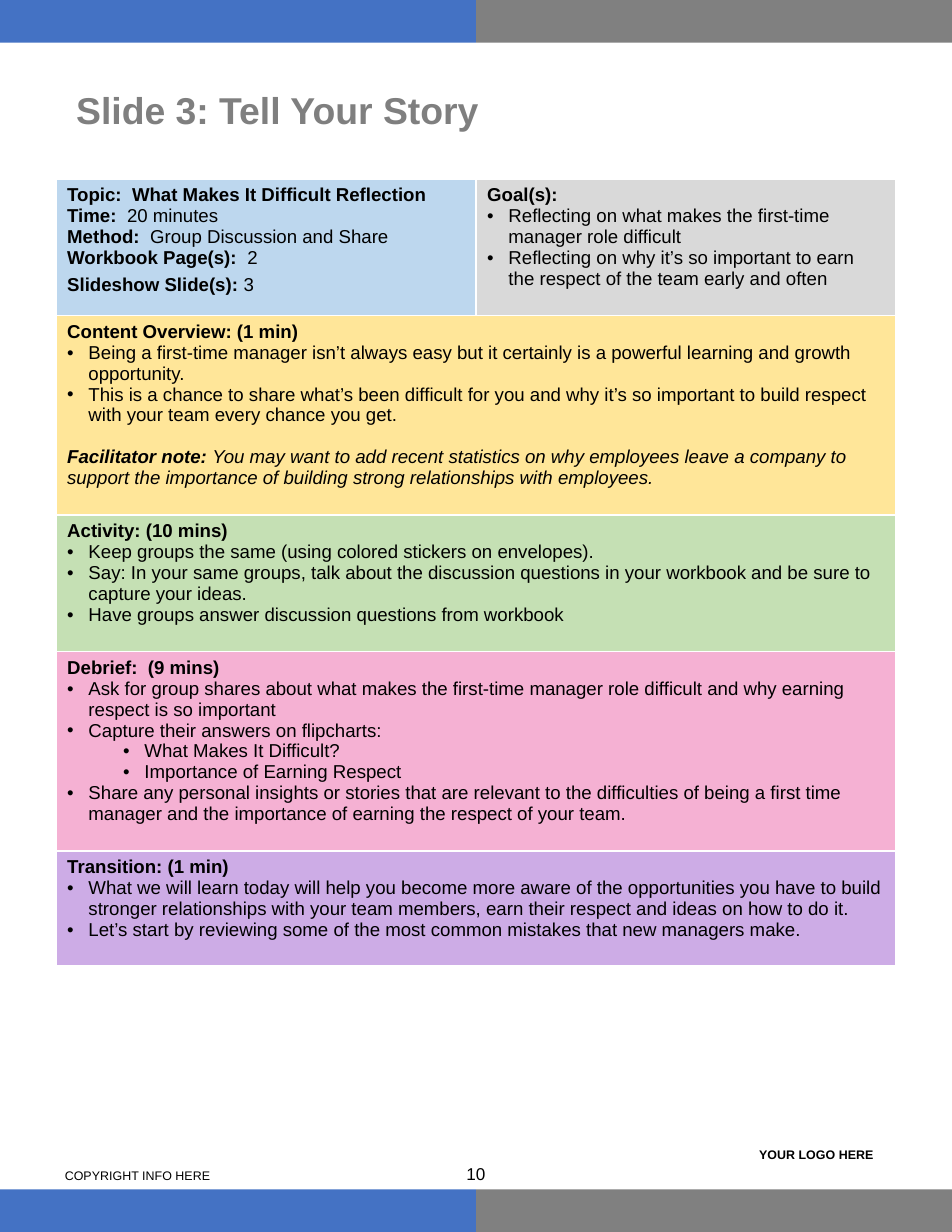
from pptx import Presentation
from pptx.dml.color import RGBColor
from pptx.enum import shapes, text
from pptx.oxml import parse_xml
from pptx.oxml.ns import nsdecls
from pptx.util import Inches, Pt

BLUE, GRAY, WHITE, BLACK = "4472C4", "808080", "FFFFFF", "000000"
CENTER, MIDDLE = text.PP_ALIGN.CENTER, text.MSO_ANCHOR.MIDDLE
LINE_BREAK = "\n"


def color(value):
    return RGBColor.from_string(value)


def write(paragraph, *parts, size=12, fill=BLACK, bold=False, italic=False, align=None):
    """Add text parts; a part is a string, or a (string, bold) pair."""
    paragraph.alignment = align
    for part in parts:
        if part == LINE_BREAK:
            paragraph.add_line_break()
            continue
        words, weight = part if isinstance(part, tuple) else (part, bold)
        run = paragraph.add_run()
        run.text = words
        font = run.font
        font.name, font.size, font.bold, font.italic = "Arial", Pt(size), weight, italic
        font.color.rgb = color(fill)


def add_bullet(paragraph, level=0):
    paragraph.level = level
    properties = paragraph._p.get_or_add_pPr()
    properties.set("marL", str(Inches(0.19 + 0.5 * level)))
    properties.set("indent", str(Inches(-0.19)))
    properties.append(parse_xml(f'<a:buFont {nsdecls("a")} typeface="Arial"/>'))
    properties.append(parse_xml(f'<a:buChar {nsdecls("a")} char="•"/>'))


def add_band(slide, top, height=0.38):
    for left, fill in ((0, BLUE), (4.25, GRAY)):
        shape = slide.shapes.add_shape(
            shapes.MSO_SHAPE.RECTANGLE,
            Inches(left), Inches(top), Inches(4.25), Inches(height))
        shape.shadow.inherit = False
        shape.fill.solid()
        shape.fill.fore_color.rgb = color(fill)
        shape.line.fill.background()


def add_label(slide, box, words, anchor=text.MSO_ANCHOR.TOP, **format):
    frame = slide.shapes.add_textbox(*map(Inches, box)).text_frame
    frame.word_wrap = True
    frame.vertical_anchor = anchor
    write(frame.paragraphs[0], words, **format)


def add_title(slide, box, words):
    title = slide.shapes.title
    title.left, title.top, title.width, title.height = map(Inches, box)
    title.text_frame.vertical_anchor = MIDDLE
    paragraph = title.text_frame.paragraphs[0]
    paragraph.line_spacing = 0.9
    write(paragraph, words, size=24, fill="7F7F7F", bold=True, align=text.PP_ALIGN.LEFT)


def style_cell(cell, fill):
    properties = cell._tc.get_or_add_tcPr()
    for side in "LRTB":
        properties.append(parse_xml(
            f'<a:ln{side} {nsdecls("a")} w="{Pt(1)}"><a:solidFill>'
            f'<a:srgbClr val="{WHITE}"/></a:solidFill></a:ln{side}>'))
    cell.fill.solid()
    cell.fill.fore_color.rgb = color(fill)


def fill_section(cell, heading, bullets, note=None):
    """Write a bold heading, (level, words) bullets and an optional italic note."""
    frame = cell.text_frame
    write(frame.paragraphs[0], heading, bold=True)
    for level, words in bullets:
        paragraph = frame.add_paragraph()
        add_bullet(paragraph, level)
        write(paragraph, words)
    if note:
        paragraph = frame.add_paragraph()
        paragraph.space_before = Pt(13.5)
        write(paragraph, ("Facilitator note: ", True), note, italic=True)


def fill_topic(cell):
    frame = cell.text_frame
    write(frame.paragraphs[0], ("Topic:  What Makes It Difficult Reflection", True),
          LINE_BREAK, ("Time:  ", True), "20 minutes")
    for label, value in (("Method:  ", "Group Discussion and Share"),
                         ("Workbook Page(s):  ", "2"),
                         ("Slideshow Slide(s): ", "3")):
        paragraph = frame.add_paragraph()
        write(paragraph, (label, True), value)
    paragraph.space_before = Pt(4)


GOALS = ("Goal(s):", [
    (0, "Reflecting on what makes the first-time manager role difficult"),
    (0, "Reflecting on why it’s so important to earn the respect of the team early and often")])

# Fill, row height, heading, bullets and optional note
SECTIONS = [
    ("FFE699", 1.78, "Content Overview: (1 min)", [
        (0, "Being a first-time manager isn’t always easy but it certainly is a powerful "
            "learning and growth opportunity."),
        (0, "This is a chance to share what’s been difficult for you and why it’s so "
            "important to build respect with your team every chance you get.")],
     "You may want to add recent statistics on why employees leave a company to support "
     "the importance of building strong relationships with employees."),
    ("C5E0B4", 1.22, "Activity: (10 mins)", [
        (0, "Keep groups the same (using colored stickers on envelopes)."),
        (0, "Say: In your same groups, talk about the discussion questions in your "
            "workbook and be sure to capture your ideas."),
        (0, "Have groups answer discussion questions from workbook")]),
    ("F5B1D3", 1.78, "Debrief:  (9 mins)", [
        (0, "Ask for group shares about what makes the first-time manager role difficult "
            "and why earning respect is so important"),
        (0, "Capture their answers on flipcharts:"),
        (1, "What Makes It Difficult?"),
        (1, "Importance of Earning Respect"),
        (0, "Share any personal insights or stories that are relevant to the difficulties "
            "of being a first time manager and the importance of earning the respect of "
            "your team.")]),
    ("CDACE6", 1.02, "Transition: (1 min)", [
        (0, "What we will learn today will help you become more aware of the opportunities "
            "you have to build stronger relationships with your team members, earn their "
            "respect and ideas on how to do it."),
        (0, "Let’s start by reviewing some of the most common mistakes that new managers "
            "make.")]),
]


def add_plan(slide, left, top, width):
    heights = [1.22] + [section[1] for section in SECTIONS]
    table = slide.shapes.add_table(
        len(heights), 2, Inches(left), Inches(top), Inches(width), Inches(sum(heights))).table
    table.first_row = table.horz_banding = False
    for row, height in zip(table.rows, heights):
        row.height = Inches(height)

    # Topic and goals
    style_cell(table.cell(0, 0), "BDD7EE")
    fill_topic(table.cell(0, 0))
    style_cell(table.cell(0, 1), "D9D9D9")
    fill_section(table.cell(0, 1), *GOALS)

    # Full-width sections
    for row, (fill, _, *content) in enumerate(SECTIONS, 1):
        cell = table.cell(row, 0)
        cell.merge(table.cell(row, 1))
        for column in range(2):
            style_cell(table.cell(row, column), fill)
        fill_section(cell, *content)


def main():
    presentation = Presentation()
    presentation.slide_width, presentation.slide_height = Inches(8.5), Inches(11)
    slide = presentation.slides.add_slide(presentation.slide_layouts[5])

    # Header and footer
    add_band(slide, 0)
    add_label(slide, (0.48, 10.38, 5.69, 0.24), "COPYRIGHT INFO HERE", size=8)
    add_label(slide, (6.62, 10.08, 1.34, 0.45), "YOUR LOGO HERE",
              anchor=MIDDLE, size=8, bold=True, align=CENTER)
    add_band(slide, 10.62)
    add_label(slide, (4, 10.34, 0.5, 0.42), "10", size=11, align=CENTER)

    # Title and session plan
    add_title(slide, (0.58, 0.59, 7.33, 0.82), "Slide 3: Tell Your Story")
    add_plan(slide, 0.5, 1.6, 7.5)
    presentation.save("out.pptx")


if __name__ == "__main__":
    main()
